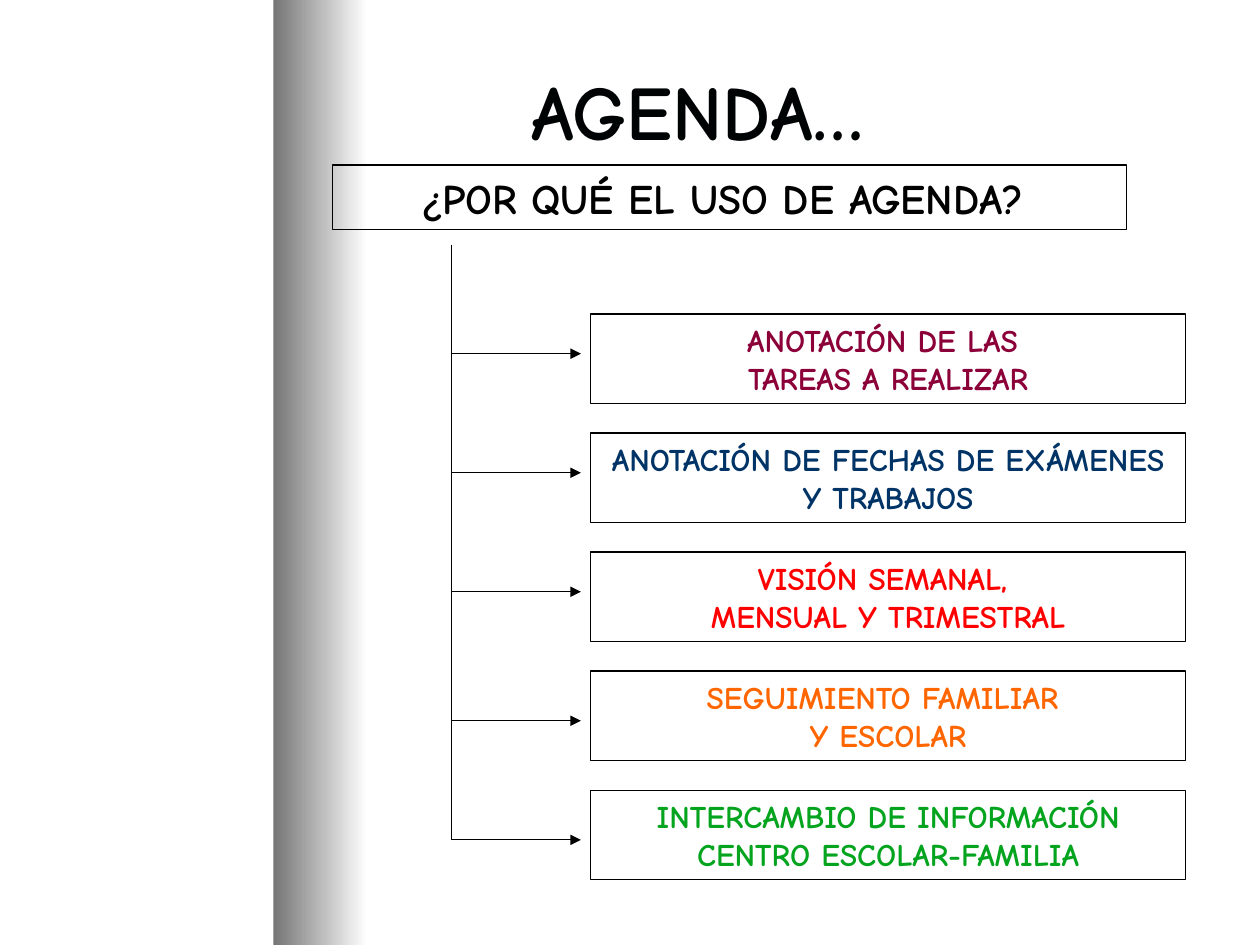
from pptx import Presentation
from pptx.dml.color import RGBColor
from pptx.enum.shapes import MSO_CONNECTOR, MSO_SHAPE
from pptx.enum.text import MSO_ANCHOR, PP_ALIGN
from pptx.oxml.ns import qn
from pptx.util import Cm, Pt
from lxml import etree

RECTANGLE = MSO_SHAPE.RECTANGLE
STRAIGHT = MSO_CONNECTOR.STRAIGHT
BOTTOM, MIDDLE = MSO_ANCHOR.BOTTOM, MSO_ANCHOR.MIDDLE
LEFT, CENTER = PP_ALIGN.LEFT, PP_ALIGN.CENTER
FONT = "Comic Neue"
COLORS = {
    "shade": "757575", "paper": "FFFFFF", "title": "000304", "ink": "000000",
    "maroon": "8C0039", "navy": "003366", "red": "FF0000",
    "orange": "FF6600", "green": "04A41F",
}
REASONS = [
    (["ANOTACIÓN DE LAS ", "TAREAS A REALIZAR"], "maroon", 0.8),
    (["ANOTACIÓN DE FECHAS DE EXÁMENES Y TRABAJOS"], "navy", 0.8),
    (["VISIÓN SEMANAL, ", "MENSUAL Y TRIMESTRAL"], "red", 0.8),
    (["SEGUIMIENTO FAMILIAR ", "Y ESCOLAR"], "orange", 1),
    (["INTERCAMBIO DE INFORMACIÓN CENTRO ESCOLAR-FAMILIA"], "green", 1),
]


def color(name):
    """Return the named palette color."""
    return RGBColor.from_string(COLORS[name])


def write(shape, lines, size, ink, align, anchor):
    """Fill a shape with bold paragraphs."""
    frame = shape.text_frame
    frame.word_wrap = True
    frame.vertical_anchor = anchor
    frame.text = "\n".join(lines)
    for para in frame.paragraphs:
        para.alignment = align
        para.font.name = FONT
        para.font.size = Pt(size)
        para.font.bold = True
        para.font.color.rgb = color(ink)


def add_shade(page, left, top, width, height):
    """Draw the band that fades from gray to the page color."""
    band = page.shapes.add_shape(RECTANGLE, Cm(left), Cm(top), Cm(width), Cm(height))
    band.shadow.inherit = False
    band.line.fill.background()
    band.fill.gradient()
    band.fill.gradient_angle = 0
    for stop, name in zip(band.fill.gradient_stops, ("shade", "paper")):
        stop.color.rgb = color(name)


def add_title(page, left, top, width, height):
    """Place and format the title placeholder."""
    title = page.shapes.title
    title.left, title.top = Cm(left), Cm(top)
    title.width, title.height = Cm(width), Cm(height)
    write(title, [" AGENDA…"], 44, "title", LEFT, BOTTOM)


def add_box(page, left, top, width, height, lines, size, ink):
    """Draw an outlined box with centered text."""
    box = page.shapes.add_shape(RECTANGLE, Cm(left), Cm(top), Cm(width), Cm(height))
    box.shadow.inherit = False
    box.fill.background()
    box.line.color.rgb = color("ink")
    box.line.width = Pt(0.75)
    write(box, lines, size, ink, CENTER, MIDDLE)


def add_line(page, x1, y1, x2, y2, arrow=False):
    """Draw a thin line, with an arrowhead at its end if asked."""
    line = page.shapes.add_connector(STRAIGHT, Cm(x1), Cm(y1), Cm(x2), Cm(y2))
    line.line.color.rgb = color("ink")
    line.line.width = Pt(0.75)
    if arrow:
        etree.SubElement(line.line._get_or_add_ln(), qn("a:tailEnd"), type="triangle")
    etree.SubElement(line._element.spPr, qn("a:effectLst"))


def add_reasons(page, left, top, width, height):
    """Draw the trunk, its arrows and the column of reasons."""
    box_left, box_width, box_height, pitch = left + 2.81, width - 2.81, 1.8, 2.4
    first = top + 1.4
    add_line(page, left, top, left, top + height)
    for index, (lines, ink, drop) in enumerate(REASONS):
        box_top = first + index * pitch
        add_box(page, box_left, box_top, box_width, box_height, lines, 18, ink)
        add_line(page, left, box_top + drop, box_left - 0.2, box_top + drop, arrow=True)


def main():
    """Build the agenda slide."""
    deck = Presentation()
    deck.slide_width, deck.slide_height = Cm(25.4), Cm(19.05)
    page = deck.slides.add_slide(deck.slide_layouts[5])
    add_shade(page, 5.51, 0, 1.9, 19.05)
    add_title(page, 9.91, 1.12, 9.6, 2.16)
    add_box(page, 6.71, 3.33, 16, 1.3, ["¿POR QUÉ EL USO DE AGENDA? "], 24, "ink")
    add_reasons(page, 9.1, 4.93, 14.8, 12)
    deck.save("out.pptx")


if __name__ == "__main__":
    main()
